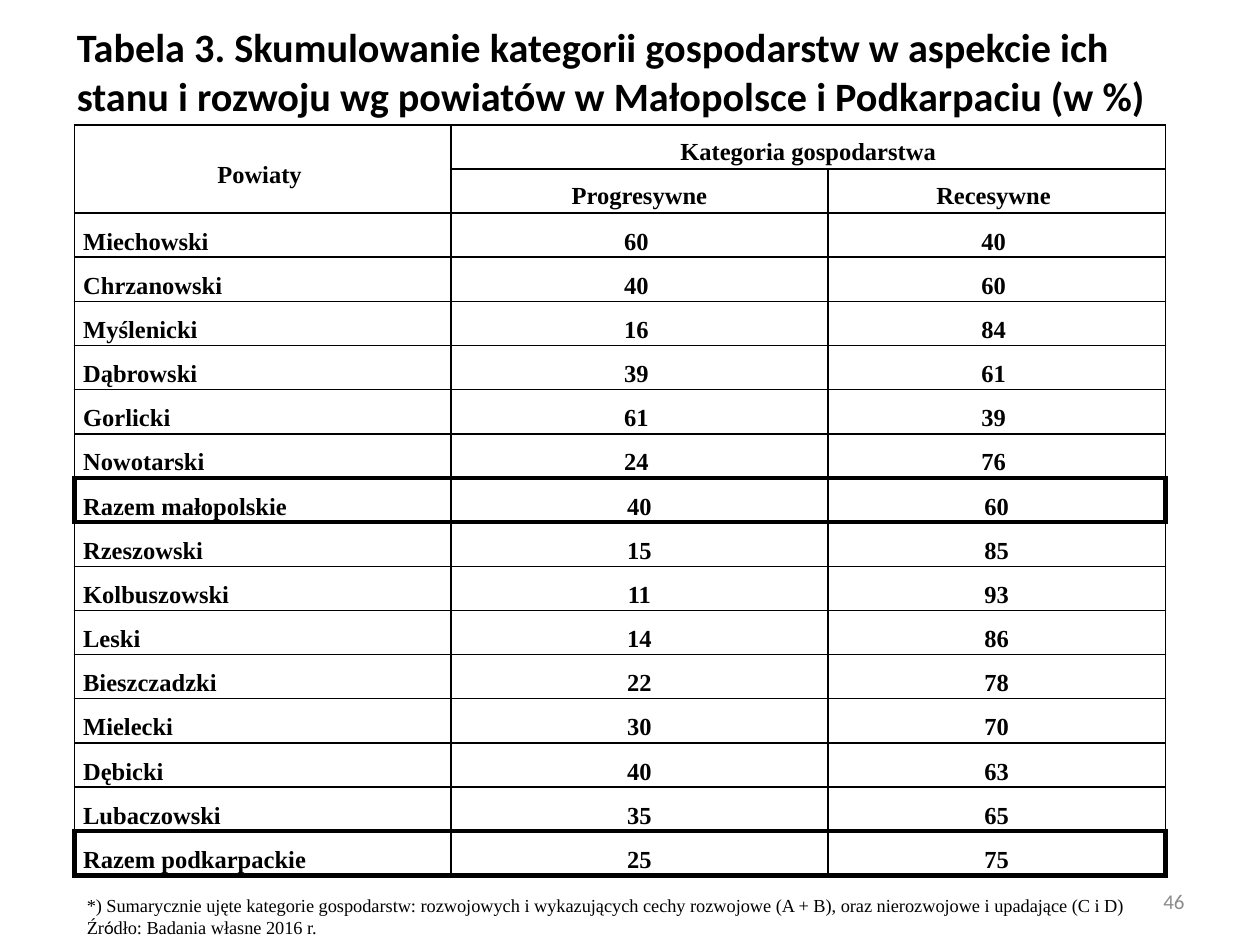
from lxml import etree
from pptx import Presentation
from pptx import util as u
from pptx.dml.color import RGBColor
from pptx.enum import text
from pptx.oxml import ns

BLACK = RGBColor(0x00, 0x00, 0x00)
GRAY = RGBColor(0x8C, 0x8C, 0x8C)
SANS, SERIF = "Calibri", "Times New Roman"
LEFT, CENTER = text.PP_ALIGN.LEFT, text.PP_ALIGN.CENTER
TOP, MIDDLE = text.MSO_ANCHOR.TOP, text.MSO_ANCHOR.MIDDLE

TITLE = ("Tabela 3. Skumulowanie kategorii gospodarstw w aspekcie ich "
         "stanu i rozwoju wg powiatów w Małopolsce i Podkarpaciu (w %)")
NOTE = ("*) Sumarycznie ujęte kategorie gospodarstw: rozwojowych i wykazujących "
        "cechy rozwojowe (A + B), oraz nierozwojowe i upadające (C i D)")
ROWS = [
    ("Powiaty ", "Kategoria gospodarstwa", ""),
    ("", "Progresywne", "Recesywne "),
    ("Miechowski", "60 ", "40 "),
    ("Chrzanowski", "40 ", "60 "),
    ("Myślenicki", "16 ", "84 "),
    ("Dąbrowski", "39 ", "61 "),
    ("Gorlicki", "61 ", "39 "),
    ("Nowotarski", "24 ", "76 "),
    ("Razem małopolskie", "40", "60"),
    ("Rzeszowski", "15", "85"),
    ("Kolbuszowski", "11", "93"),
    ("Leski", "14", "86"),
    ("Bieszczadzki", "22", "78"),
    ("Mielecki", "30", "70"),
    ("Dębicki", "40", "63"),
    ("Lubaczowski", "35", "65"),
    ("Razem podkarpackie", "25", "75"),
]
HEADER_ROWS = 2
COLUMN_WIDTHS = (2.99, 2.99, 2.68)
ROW_HEIGHT = 0.35
TOTALS = {i for i, row in enumerate(ROWS) if row[0].startswith("Razem")}


def add_span(para, words, size, font=SERIF, color=BLACK, bold=False):
    span = para.add_run()
    span.text = words
    span.font.size = u.Pt(size)
    span.font.name = font
    span.font.bold = bold
    span.font.color.rgb = color


def place(shape, left, top, width, height, anchor=MIDDLE):
    """Position a text shape and return its frame."""
    shape.left, shape.top = u.Inches(left), u.Inches(top)
    shape.width, shape.height = u.Inches(width), u.Inches(height)
    frame = shape.text_frame
    frame.word_wrap = True
    frame.vertical_anchor = anchor
    return frame


def add_box(page, *bounds):
    return place(page.shapes.add_textbox(0, 0, 0, 0), *bounds)


def set_borders(cell, widths):
    """Draw black cell edges; widths are points for L, R, T, B."""
    properties = cell._tc.get_or_add_tcPr()
    for index, (side, width) in enumerate(zip("LRTB", widths)):
        line = etree.Element(ns.qn(f"a:ln{side}"), w=str(u.Pt(width)))
        fill = etree.SubElement(line, ns.qn("a:solidFill"))
        etree.SubElement(fill, ns.qn("a:srgbClr"), val=str(BLACK))
        properties.insert(index, line)


def border_widths(row, column):
    """Thick frame around each total row, thin lines elsewhere."""
    total = row in TOTALS
    thick = (
        total and column == 0,
        total and column == len(COLUMN_WIDTHS) - 1,
        total or row - 1 in TOTALS,
        total or row + 1 in TOTALS,
    )
    return [3 if edge else 1 for edge in thick]


def fill_cell(cell, words, align, anchor):
    cell.fill.background()
    cell.vertical_anchor = anchor
    cell.margin_left = cell.margin_right = u.Inches(0.07)
    cell.margin_top = cell.margin_bottom = 0
    para = cell.text_frame.paragraphs[0]
    para.alignment = align
    para.line_spacing = 1.5
    if words:
        add_span(para, words, 14, bold=True)


def add_county_table(page):
    frame = page.shapes.add_table(
        len(ROWS), len(COLUMN_WIDTHS), u.Inches(0.59), u.Inches(0.99),
        u.Inches(sum(COLUMN_WIDTHS)), u.Inches(ROW_HEIGHT * len(ROWS)))
    table = frame.table
    table.first_row = table.horz_banding = False
    for column, width in zip(table.columns, COLUMN_WIDTHS):
        column.width = u.Inches(width)
    for r, values in enumerate(ROWS):
        table.rows[r].height = u.Inches(ROW_HEIGHT)
        header = r < HEADER_ROWS
        for c, words in enumerate(values):
            cell = table.cell(r, c)
            align = LEFT if c == 0 and not header else CENTER
            anchor = TOP if header and c else MIDDLE
            fill_cell(cell, words, align, anchor)
            set_borders(cell, border_widths(r, c))
    table.cell(0, 0).merge(table.cell(1, 0))
    table.cell(0, 1).merge(table.cell(0, 2))


def add_title(page):
    frame = place(page.shapes.title, 0.51, 0.13, 8.82, 0.88, TOP)
    frame.auto_size = text.MSO_AUTO_SIZE.SHAPE_TO_FIT_TEXT
    para = frame.paragraphs[0]
    para.alignment = LEFT
    add_span(para, TITLE, 23, SANS, bold=True)


def add_page_number(page):
    para = add_box(page, 7.17, 6.95, 2.33, 0.4).paragraphs[0]
    para.alignment = text.PP_ALIGN.RIGHT
    add_span(para, "46", 12, SANS, GRAY)


def add_footnote(page):
    frame = add_box(page, 0.59, 7.04, 8.58, 0.46)
    frame.auto_size = text.MSO_AUTO_SIZE.SHAPE_TO_FIT_TEXT
    note, origin = frame.paragraphs[0], frame.add_paragraph()
    note.alignment = origin.alignment = text.PP_ALIGN.JUSTIFY
    add_span(note, NOTE, 10.5)
    for words, font in (("Źr", SERIF), ("ó", SANS),
                        ("dło: Badania własne 2016 r. ", SERIF)):
        add_span(origin, words, 10.5, font)


def main():
    deck = Presentation()
    deck.slide_width, deck.slide_height = u.Inches(10), u.Inches(7.5)
    page = deck.slides.add_slide(deck.slide_layouts[5])  # title only
    add_page_number(page)
    add_title(page)
    add_county_table(page)
    add_footnote(page)
    deck.save("out.pptx")


if __name__ == "__main__":
    main()
